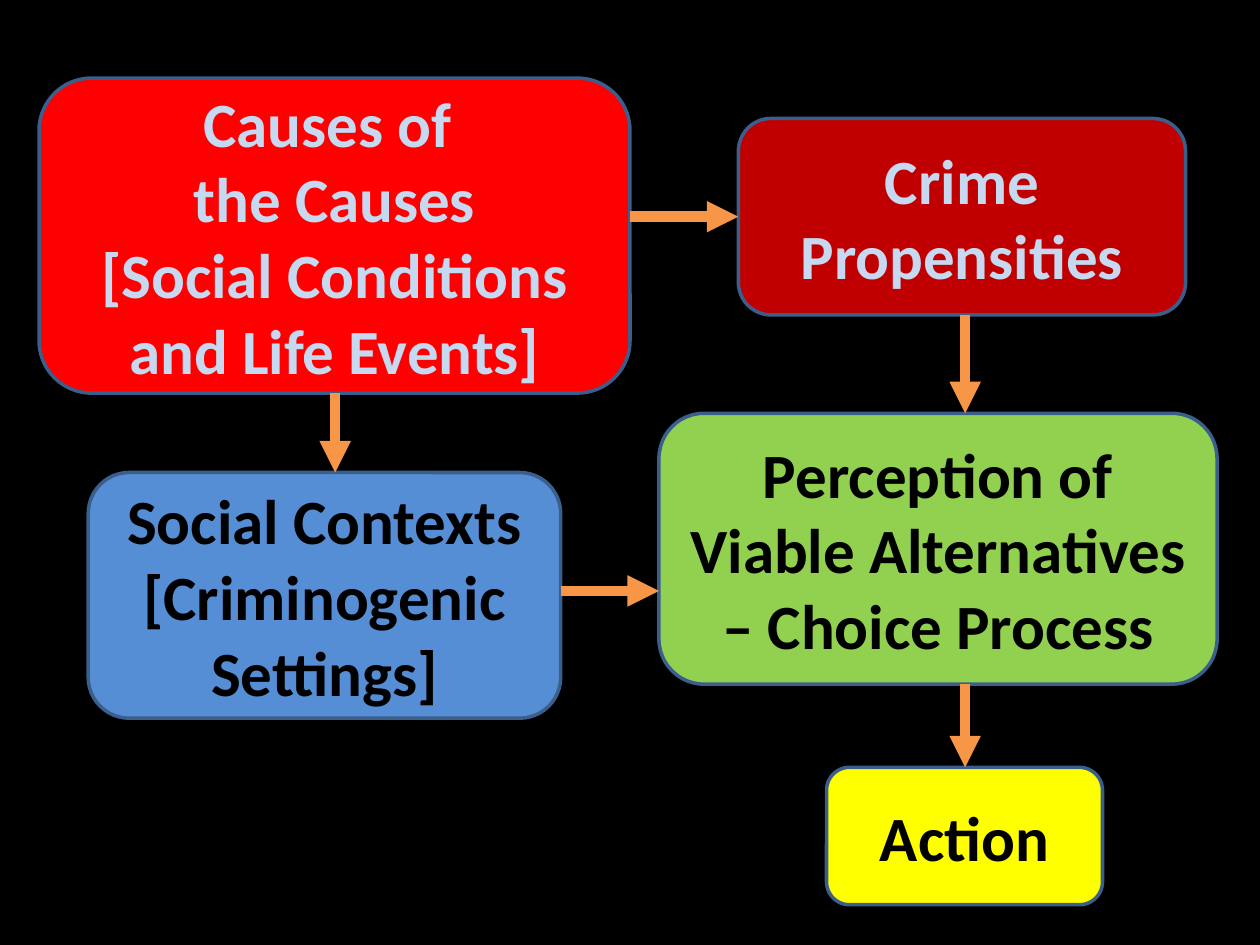
from lxml.etree import SubElement
from pptx import Presentation
from pptx.dml.color import RGBColor
from pptx.enum.shapes import MSO_CONNECTOR, MSO_SHAPE
from pptx.enum.text import MSO_ANCHOR, PP_ALIGN
from pptx.oxml.ns import qn
from pptx.util import Inches, Pt

WIDTH, HEIGHT = 10, 7.5
BACKGROUND, OUTLINE, ARROW = "000000", "3A5F8C", "F79646"
PALE, DARK = "C6D9F1", "000000"

BOXES = {
    "causes": (["Causes of ", "the Causes", "[Social Conditions and Life Events]"],
               (0.31, 0.62, 4.69, 2.5), "FF0000", PALE),
    "propensities": (["Crime Propensities"], (5.86, 0.94, 3.55, 1.56), "C00000", PALE),
    "contexts": (["Social Contexts", "[Criminogenic Settings]"],
                 (0.7, 3.75, 3.75, 1.95), "558ED5", DARK),
    "choice": (["Perception of Viable Alternatives – Choice Process"],
               (5.23, 3.28, 4.43, 2.15), "92D050", DARK),
    "action": (["Action"], (6.56, 6.09, 2.19, 1.09), "FFFF00", DARK),
}
ACROSS = [("causes", "propensities", 1.72), ("contexts", "choice", 4.69)]
DOWN = [("causes", "contexts", 2.66), ("propensities", "choice", 7.66),
        ("choice", "action", 7.66)]


def color(value):
    """Turn a hex string into a colour."""
    return RGBColor.from_string(value)


def write(shape, lines, *, size=36, font="Calibri", ink=DARK, bold=True):
    """Fill a shape with centred, formatted paragraphs."""
    frame = shape.text_frame
    frame.word_wrap = True
    frame.vertical_anchor = MSO_ANCHOR.MIDDLE
    for number, line in enumerate(lines):
        para = frame.add_paragraph() if number else frame.paragraphs[0]
        para.alignment = PP_ALIGN.CENTER
        span = para.add_run()
        span.text = line
        span.font.size, span.font.name, span.font.bold = Pt(size), font, bold
        span.font.color.rgb = color(ink)


def add_box(page, lines, place, fill, ink):
    """Draw one rounded box with its text."""
    box = page.shapes.add_shape(MSO_SHAPE.ROUNDED_RECTANGLE, *map(Inches, place))
    box.shadow.inherit = False
    box.fill.solid()
    box.fill.fore_color.rgb = color(fill)
    box.line.color.rgb = color(OUTLINE)
    box.line.width = Pt(2)
    write(box, lines, ink=ink)
    return box


def add_arrow(page, start, end):
    """Draw a straight arrow between two points."""
    arrow = page.shapes.add_connector(MSO_CONNECTOR.STRAIGHT, *start, *end)
    arrow.line.color.rgb = color(ARROW)
    arrow.line.width = Pt(6)
    SubElement(arrow.line._get_or_add_ln(), qn("a:tailEnd"), type="triangle")
    SubElement(arrow._element.spPr, qn("a:effectLst"))


def main():
    """Build the flow diagram and save it."""
    deck = Presentation()
    deck.slide_width, deck.slide_height = Inches(WIDTH), Inches(HEIGHT)
    page = deck.slides.add_slide(deck.slide_layouts[6])
    page.background.fill.solid()
    page.background.fill.fore_color.rgb = color(BACKGROUND)
    boxes = {name: add_box(page, *details) for name, details in BOXES.items()}
    for source, target, level in ACROSS:
        left, right = boxes[source], boxes[target]
        add_arrow(page, (left.left + left.width, Inches(level)), (right.left, Inches(level)))
    for source, target, level in DOWN:
        upper, lower = boxes[source], boxes[target]
        add_arrow(page, (Inches(level), upper.top + upper.height), (Inches(level), lower.top))
    deck.save("out.pptx")


if __name__ == "__main__":
    main()
